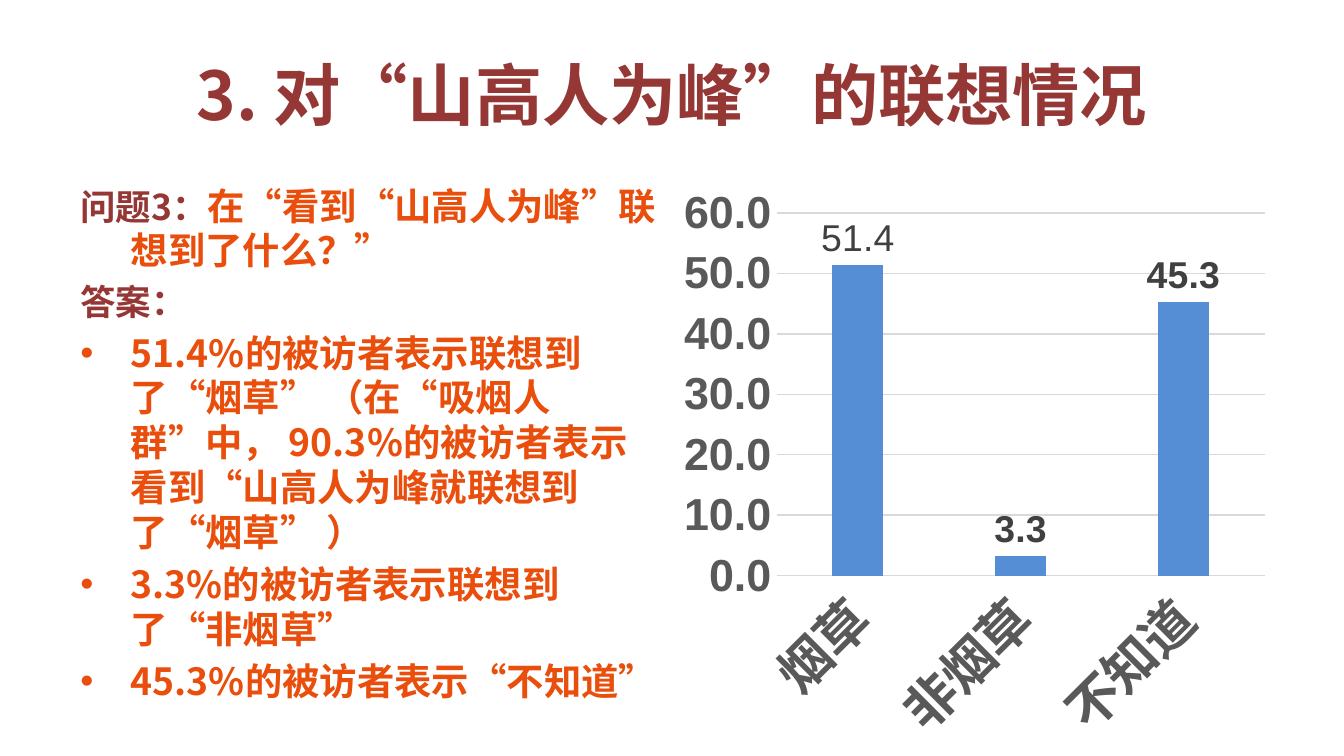
from lxml import etree
from pptx import Presentation
from pptx import util as u
from pptx.chart.data import CategoryChartData
from pptx.dml.color import RGBColor
from pptx.enum import chart as charts, lang, text
from pptx.oxml.ns import qn

COLORS = {
    "maroon": "953735",
    "orange": "E94E0C",
    "bar": "558ED5",
    "axis": "595959",
    "label": "404040",
    "grid": "D9D9D9",
}
HEADING_FONT = "Noto Sans CJK SC"
CHART_FONT = "Arial"


def color(name):
    return RGBColor.from_string(COLORS[name])


def format_font(font, *, size, fill, name=CHART_FONT, bold=True):
    font.size = u.Pt(size)
    font.name = name
    font.bold = bold
    font.color.rgb = color(fill)


def add_span(para, words, **style):
    """Add a run of Chinese text in the heading font."""
    span = para.add_run()
    span.text = words
    format_font(span.font, name=HEADING_FONT, **style)
    span.font.language_id = lang.MSO_LANGUAGE_ID.SIMPLIFIED_CHINESE
    latin = span.font._element.find(qn("a:latin"))
    east_asian = etree.Element(qn("a:ea"), typeface=HEADING_FONT)
    latin.addnext(east_asian)


class SlideBuilder:
    hanging = u.Cm(0.95)
    space_before = u.Pt(4)

    def __init__(self, slide):
        self.slide = slide

    def text_frame(self, left, top, width, height, anchor):
        box = self.slide.shapes.add_textbox(
            u.Cm(left), u.Cm(top), u.Cm(width), u.Cm(height))
        frame = box.text_frame
        frame.word_wrap = True
        frame.vertical_anchor = anchor
        return frame

    def title(self, words, *place):
        para = self.text_frame(*place, text.MSO_ANCHOR.MIDDLE).paragraphs[0]
        para.alignment = text.PP_ALIGN.CENTER
        add_span(para, words, size=36, fill="maroon")

    def findings(self, items, *place):
        """Each item is (bulleted, [(words, size, colour), ...])."""
        frame = self.text_frame(*place, text.MSO_ANCHOR.TOP)
        for index, (bulleted, spans) in enumerate(items):
            para = frame.add_paragraph() if index else frame.paragraphs[0]
            props = para._p.get_or_add_pPr()
            props.set("marL", str(self.hanging))
            props.set("indent", str(-self.hanging))
            if bulleted:
                etree.SubElement(props, qn("a:buFont"), typeface=CHART_FONT)
                etree.SubElement(props, qn("a:buChar"), char="•")
            if index:
                para.space_before = self.space_before
            for words, size, fill in spans:
                add_span(para, words, size=size, fill=fill)

    def column_chart(self, values, *place):
        data = CategoryChartData(number_format="###0.0")
        data.categories = list(values)
        data.add_series("Series 1", list(values.values()))
        chart = self.slide.shapes.add_chart(
            charts.XL_CHART_TYPE.COLUMN_CLUSTERED,
            *(u.Cm(length) for length in place), data).chart
        chart.has_legend = False
        chart.has_title = False
        chart.font.name = CHART_FONT
        chart.font.size = u.Pt(10)

        # Axes and gridlines
        categories, scale = chart.category_axis, chart.value_axis
        for axis, size in ((categories, 28), (scale, 24)):
            axis.major_tick_mark = charts.XL_TICK_MARK.NONE
            axis.minor_tick_mark = charts.XL_TICK_MARK.NONE
            format_font(axis.tick_labels.font, size=size, fill="axis")
        categories._element.txPr.bodyPr.set("rot", str(-45 * 60000))
        scale.minimum_scale, scale.maximum_scale, scale.major_unit = 0, 60, 10
        scale.tick_labels.number_format = "###0.0"
        scale.tick_labels.number_format_is_linked = False
        scale.format.line.fill.background()
        scale.has_major_gridlines = True
        for line in (categories.format.line, scale.major_gridlines.format.line):
            line.color.rgb = color("grid")
            line.width = u.Pt(0.75)

        # Columns and value labels
        plot = chart.plots[0]
        plot.vary_by_categories = False
        plot.gap_width, plot.overlap = 219, -27
        series = plot.series[0]
        series.format.fill.solid()
        series.format.fill.fore_color.rgb = color("bar")
        labels = series.data_labels
        labels.show_value = True
        labels.number_format = "###0.0"
        labels.number_format_is_linked = False
        first_label = series.points[0].data_label
        for label, bold in ((labels, True), (first_label, False)):
            format_font(label.font, size=20, fill="label", bold=bold)
            label.position = charts.XL_LABEL_POSITION.OUTSIDE_END


def main():
    deck = Presentation()
    deck.slide_width, deck.slide_height = u.Cm(25.4), u.Cm(14.29)
    page = SlideBuilder(deck.slides.add_slide(deck.slide_layouts[6]))

    # Title
    page.title("3. 对“山高人为峰”的联想情况", 1.27, 0.58, 22.86, 2.39)

    # Question and answers
    answers = [
        "51.4%的被访者表示联想到了“烟草” （在“吸烟人群”中， "
        "90.3%的被访者表示看到“山高人为峰就联想到了“烟草” ）",
        "3.3%的被访者表示联想到了“非烟草”",
        "45.3%的被访者表示“不知道”",
    ]
    page.findings([
        (False, [("问题3：", 19, "maroon"),
                 ("在“看到“山高人为峰”联想到了什么？”", 20, "orange")]),
        (False, [("答案：", 19, "maroon")]),
        *((True, [(answer, 20, "orange")]) for answer in answers),
    ], 1.27, 3.33, 11.43, 9.42)

    # Chart of associations
    page.column_chart({"烟草": 51.4, "非烟草": 3.3, "不知道": 45.3},
                      12.7, 3.33, 11.43, 10.96)

    deck.save("out.pptx")


if __name__ == "__main__":
    main()
